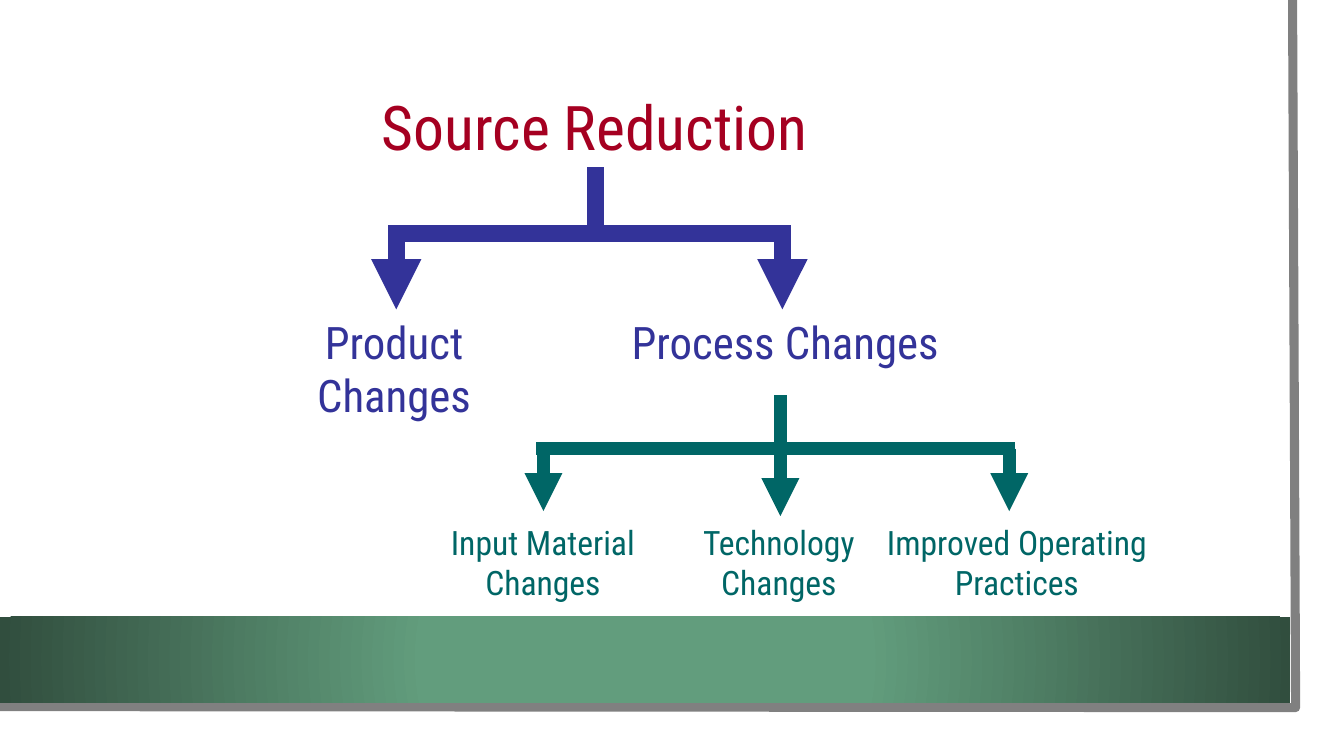
from lxml import etree
from pptx import Presentation
from pptx.dml.color import RGBColor
from pptx.enum import shapes, text
from pptx.oxml import ns
from pptx.util import Inches, Pt

COLORS = {
    "white": "FFFFFF", "edge": "808080", "band_light": "629D7D",
    "band_dark": "314E3E", "red": "A50021", "blue": "333399", "teal": "006666",
}
COLORS = {name: RGBColor.from_string(value) for name, value in COLORS.items()}


def add_label(left, top, width, height, lines, size, color, anchor=text.MSO_ANCHOR.TOP):
    box = page.shapes.add_textbox(Inches(left), Inches(top), Inches(width), Inches(height))
    frame = box.text_frame
    frame.word_wrap = True
    frame.vertical_anchor = anchor
    frame.text = lines
    for para in frame.paragraphs:
        para.alignment = text.PP_ALIGN.CENTER
        para.font.name = "Roboto Condensed"
        para.font.size = Pt(size)
        para.font.color.rgb = COLORS[color]


def add_branch(x1, y1, x2, y2, color, weight, arrow):
    branch = page.shapes.add_connector(
        shapes.MSO_CONNECTOR.STRAIGHT, Inches(x1), Inches(y1), Inches(x2), Inches(y2))
    branch.line.color.rgb = COLORS[color]
    branch.line.width = Pt(weight)
    if arrow:
        etree.SubElement(branch.line._get_or_add_ln(), ns.qn("a:tailEnd"), type="triangle")
    etree.SubElement(branch._element.spPr, ns.qn("a:effectLst"))


deck = Presentation()
deck.slide_width, deck.slide_height = Inches(13.33), Inches(7.5)
page = deck.slides.add_slide(deck.slide_layouts[6])

# White sheet
sheet = page.shapes.add_shape(
    shapes.MSO_SHAPE.RECTANGLE, 0, 0, Inches(13.1), Inches(7.27))
sheet.shadow.inherit = False
sheet.fill.solid()
sheet.fill.fore_color.rgb = COLORS["white"]
sheet.line.fill.background()

# Grey edge along the right and bottom
builder = page.shapes.build_freeform(Inches(12.82), 0)
builder.add_line_segments(
    [(Inches(12.85), Inches(7.02)), (Inches(-0.03), Inches(7.01))], close=False)
edge = builder.convert_to_shape()
edge.shadow.inherit = False
edge.fill.background()
edge.line.color.rgb = COLORS["edge"]
edge.line.width = Pt(6.5)

# Green band with a radial gradient
band = page.shapes.add_shape(
    shapes.MSO_SHAPE.RECTANGLE, 0, Inches(6.12), Inches(12.8), Inches(0.85))
band.shadow.inherit = False
band.line.fill.background()
band.fill.gradient()
for stop, position, color in zip(
        band.fill.gradient_stops, (0.34, 1), ("band_light", "band_dark")):
    stop.position = position
    stop.color.rgb = COLORS[color]
gradient = band._element.spPr.find(ns.qn("a:gradFill"))
gradient.remove(gradient.find(ns.qn("a:lin")))
radial = etree.SubElement(gradient, ns.qn("a:path"), path="circle")
etree.SubElement(radial, ns.qn("a:fillToRect"), l="50000", t="50000", r="50000", b="50000")

# Title
add_label(3.61, 0.41, 4.58, 1.25, "Source Reduction", 44, "red", text.MSO_ANCHOR.BOTTOM)

# Labels of both levels
for left, lines in ((2.03, "Product\nChanges"), (5.91, "Process Changes")):
    add_label(left, 3.07, 3.76, 1.17, lines, 32, "blue")
for left, width, lines in (
        (4.22, 2.33, "Input Material Changes"),
        (6.56, 2.33, "Technology Changes"),
        (8.49, 3.19, "Improved Operating\nPractices")):
    add_label(left, 5.13, width, 0.91, lines, 24, "teal")

# Trees: colour, weight, stem x, stem top, bar y, bar ends, arrow tips
trees = (
    ("teal", 9, 7.74, 3.92, 4.45, (5.32, 10.07), ((5.39, 5.07), (7.74, 5.12), (10.01, 5.07))),
    ("blue", 12, 5.91, 1.66, 2.32, (3.85, 7.85), ((3.93, 3.07), (7.76, 3.07))),
)
for color, weight, stem, top, bar, (start, end), tips in trees:
    add_branch(start, bar, end, bar, color, weight, False)
    add_branch(stem, top, stem, bar, color, weight, False)
    for x, tip in tips:
        add_branch(x, bar, x, tip, color, weight, True)

deck.save("out.pptx")
